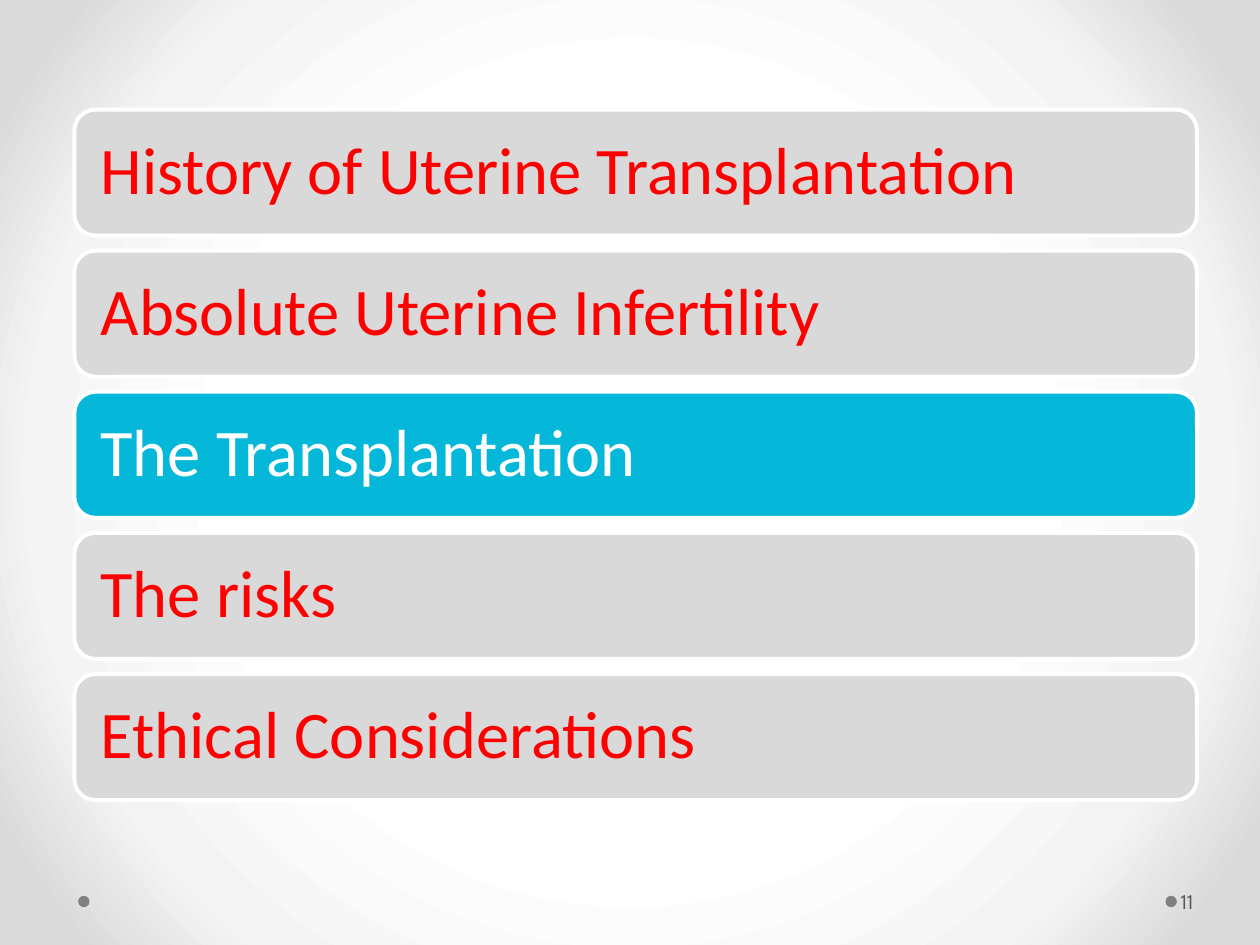
"""Build an agenda slide with the current section highlighted."""
from pptx import Presentation
from pptx.dml.color import RGBColor
from pptx.enum.shapes import MSO_SHAPE
from pptx.enum.text import MSO_ANCHOR, PP_ALIGN
from pptx.oxml import parse_xml
from pptx.oxml.ns import nsdecls
from pptx.util import Inches, Pt


def rgb(color):
    return RGBColor.from_string(color)


def write(sp, text, size, font, color, insets, spacing=1.0):
    tf = sp.text_frame
    tf.word_wrap = True
    tf.vertical_anchor = MSO_ANCHOR.MIDDLE
    tf.margin_left, tf.margin_top, tf.margin_right, tf.margin_bottom = map(Inches, insets)
    p = tf.paragraphs[0]
    p.alignment = PP_ALIGN.LEFT
    p.line_spacing = spacing
    r = p.add_run()
    r.text = text
    r.font.size = Pt(size)
    r.font.name = font
    r.font.color.rgb = rgb(color)


prs = Presentation()
prs.slide_width, prs.slide_height = Inches(10), Inches(7.5)
s = prs.slides.add_slide(prs.slide_layouts[6])

stops = "".join(
    f'<a:gs pos="{pos}000"><a:srgbClr val="{color}"/></a:gs>'
    for pos, color in [(50, "FFFFFF"), (76, "F4F4F4"), (92, "DADADA")]
)
bg = parse_xml(
    f'<p:bg {nsdecls("p", "a")}><p:bgPr><a:gradFill rotWithShape="1"><a:gsLst>{stops}</a:gsLst>'
    '<a:path path="circle"><a:fillToRect l="50000" t="50000" r="50000" b="50000"/></a:path>'
    '</a:gradFill><a:effectLst/></p:bgPr></p:bg>'
)
s._element.cSld.insert(0, bg)

for left in (9.25, 0.62):
    sp = s.shapes.add_shape(MSO_SHAPE.OVAL, Inches(left), Inches(7.11), Inches(0.09), Inches(0.09))
    sp.shadow.inherit = False
    sp.fill.solid()
    sp.fill.fore_color.rgb = rgb("808080")
    sp.line.fill.background()

sp = s.shapes.add_textbox(Inches(9.34), Inches(6.95), Inches(0.61), Inches(0.4))
write(sp, "11", 12, "League Spartan", "595959", (0.03, 0.05, 0.05, 0.05))

sections = [
    "History of Uterine Transplantation",
    "Absolute Uterine Infertility",
    "The Transplantation",
    "The risks",
    "Ethical Considerations",
]
current = "The Transplantation"
for i, section in enumerate(sections):
    fill, color = ("05B7D9", "FFFFFF") if section == current else ("D9D9D9", "FF0000")
    sp = s.shapes.add_shape(
        MSO_SHAPE.ROUNDED_RECTANGLE, Inches(0.59), Inches(0.87 + 1.12 * i), Inches(8.91), Inches(1)
    )
    sp.shadow.inherit = False
    sp.fill.solid()
    sp.fill.fore_color.rgb = rgb(fill)
    sp.line.color.rgb = rgb("FFFFFF")
    sp.line.width = Pt(2.25)
    write(sp, section, 38, "Calibri", color, (0.16,) * 4, spacing=0.9)

prs.save("out.pptx")
